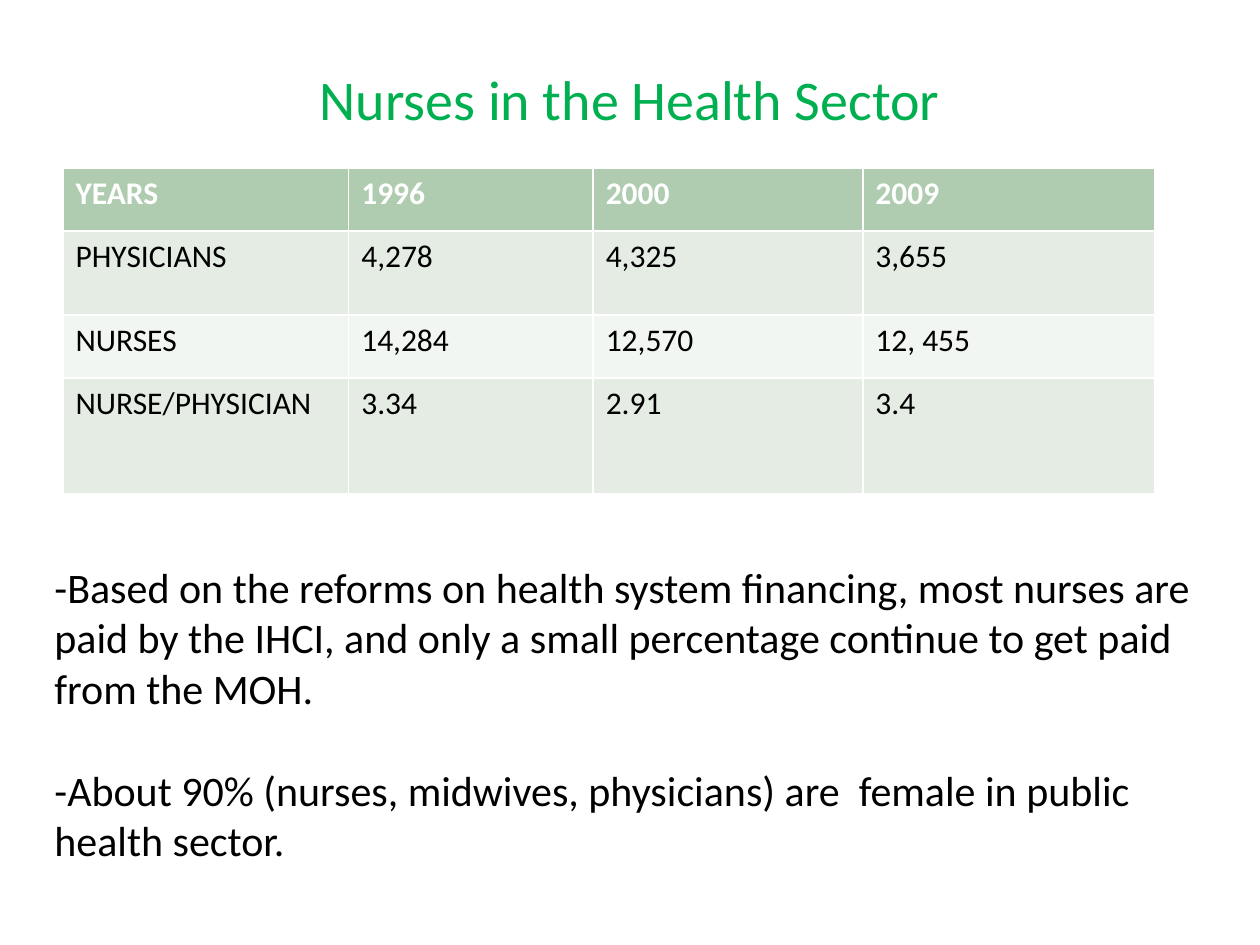
import pptx
import pptx.dml.color
import pptx.enum.text
import pptx.util

Pt = pptx.util.Pt
Align = pptx.enum.text.PP_ALIGN
Anchor = pptx.enum.text.MSO_ANCHOR

TITLE = "Nurses in the Health Sector"
ROWS = [
    ("YEARS", "1996", "2000", "2009"),
    ("PHYSICIANS", "4,278", "4,325", "3,655"),
    ("NURSES", "14,284", "12,570", "12, 455"),
    ("NURSE/PHYSICIAN", "3.34", "2.91", "3.4"),
]
NOTES = [
    "-Based on the reforms on health system financing, most nurses are paid "
    "by the IHCI, and only a small percentage continue to get paid from the MOH.",
    "-About 90% (nurses, midwives, physicians) are  female in public health sector.",
]

WIDTHS = [163.3, 139.7, 154.1, 167]
HEIGHTS = [36, 48, 36, 66]
LINE = 29.3  # height of one line of body text

THEME = {
    "font": "Calibri",
    "title": "00B050",
    "text": "000000",
    "light": "FFFFFF",
    "head": "B0CCB0",
    "bands": ("F2F6F2", "E4ECE4"),
    "title_size": 32,
    "cell_size": 18,
    "body_size": 24,
}


def color(name):
    return pptx.dml.color.RGBColor.from_string(name)


def style(para, size, ink, bold=False):
    font = para.font
    font.name = THEME["font"]
    font.size = Pt(size)
    font.bold = bold
    font.color.rgb = color(ink)


def place(shape, left, top, width, height):
    shape.left, shape.top = Pt(left), Pt(top)
    shape.width, shape.height = Pt(width), Pt(height)


def add_title(slide):
    title = slide.shapes.title
    place(title, 36, 21.6, 648, 68.4)
    frame = title.text_frame
    frame.text = TITLE
    frame.vertical_anchor = Anchor.MIDDLE
    para = frame.paragraphs[0]
    para.alignment = Align.CENTER
    style(para, THEME["title_size"], THEME["title"])


def add_grid(slide):
    """Fill the table; its default style draws the white rules."""
    table = slide.shapes.add_table(
        len(ROWS), len(WIDTHS), Pt(36), Pt(96),
        Pt(sum(WIDTHS)), Pt(sum(HEIGHTS))).table
    for col, width in zip(table.columns, WIDTHS):
        col.width = Pt(width)
    for row, height in zip(table.rows, HEIGHTS):
        row.height = Pt(height)
    for r, texts in enumerate(ROWS):
        head = r == 0
        fill = THEME["head"] if head else THEME["bands"][r % 2]
        ink = THEME["light"] if head else THEME["text"]
        for c, text in enumerate(texts):
            cell = table.cell(r, c)
            cell.text = text
            cell.fill.solid()
            cell.fill.fore_color.rgb = color(fill)
            style(cell.text_frame.paragraphs[0], THEME["cell_size"], ink, head)


def add_notes(slide):
    box = slide.shapes.add_textbox(Pt(24), Pt(288), Pt(666), Pt(232.6))
    frame = box.text_frame
    frame.word_wrap = True
    frame.margin_top = Pt(3.6 + LINE)
    for i, text in enumerate(NOTES):
        para = frame.add_paragraph() if i else frame.paragraphs[0]
        para.text = text
        para.space_before = Pt(LINE if i else 0)
        style(para, THEME["body_size"], THEME["text"])


def main():
    deck = pptx.Presentation()
    deck.slide_width, deck.slide_height = Pt(720), Pt(540)
    slide = deck.slides.add_slide(deck.slide_layouts.get_by_name("Title Only"))
    add_title(slide)
    add_grid(slide)
    add_notes(slide)
    deck.save("out.pptx")


if __name__ == "__main__":
    main()
